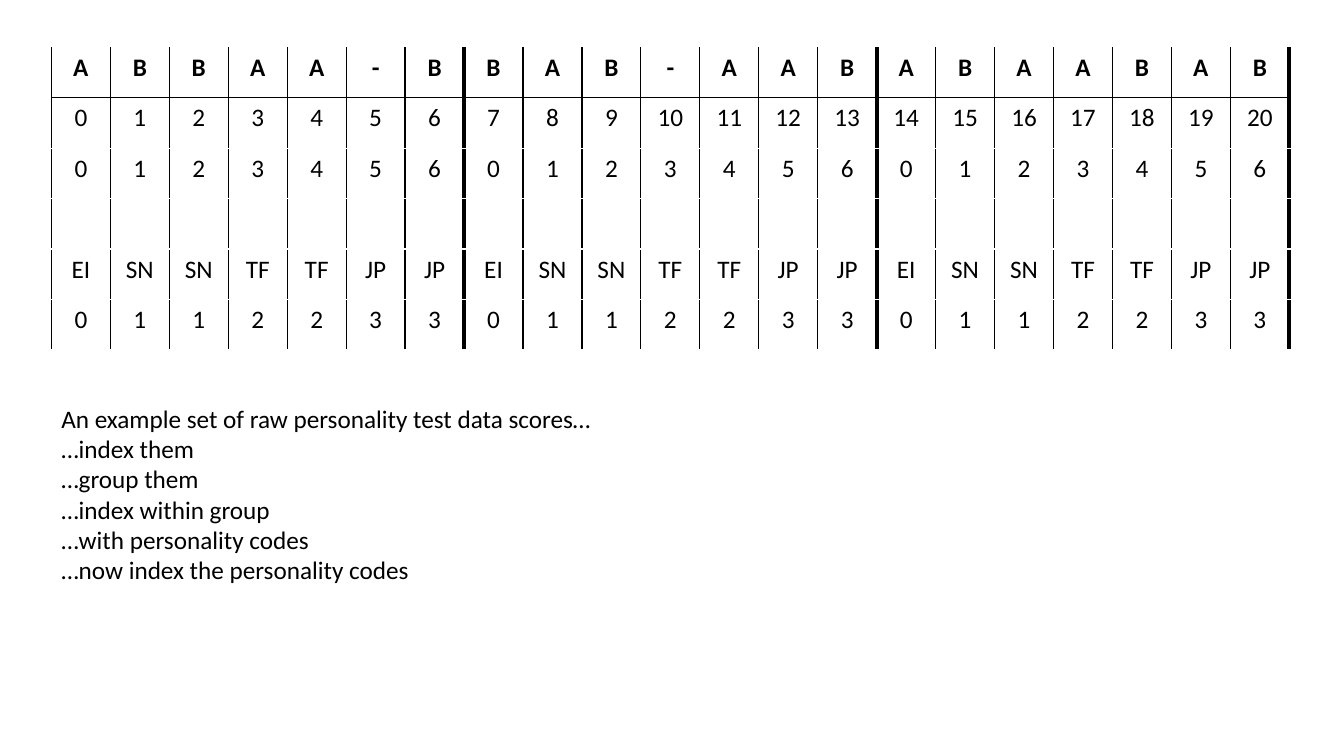
from dataclasses import dataclass

from lxml import etree
from pptx import Presentation
from pptx.dml.color import RGBColor
from pptx.enum.text import MSO_AUTO_SIZE, PP_ALIGN
from pptx.oxml.ns import qn
from pptx.util import Inches, Pt

BLACK = RGBColor(0x00, 0x00, 0x00)
WHITE = RGBColor(0xFF, 0xFF, 0xFF)
CENTER = PP_ALIGN.CENTER
FIT_SHAPE = MSO_AUTO_SIZE.SHAPE_TO_FIT_TEXT

LEFT = Inches(0.51)
GROUP_SIZE = 7
GROUP_COUNT = 3
THIN, THICK = 1, 3
TEXT_FORMAT = {"name": "Calibri", "size": Pt(18), "bold": False}
HEADER_FORMAT = TEXT_FORMAT | {"bold": True}

ANSWERS = "ABBAA-BBAB-AABABAABAB"
CODES = ["EI", "SN", "SN", "TF", "TF", "JP", "JP"]
CODE_ORDER = list(dict.fromkeys(CODES))
STEPS = [
    "An example set of raw personality test data scores…",
    "…index them",
    "…group them",
    "…index within group",
    "…with personality codes",
    "…now index the personality codes",
]


@dataclass
class Border:
    side: str
    color: RGBColor
    points: int


def add_span(para, text: str, text_format: dict) -> None:
    span = para.add_run()
    span.text = text
    for name, value in text_format.items():
        setattr(span.font, name, value)
    span.font.color.rgb = BLACK


def add_borders(cell, borders: list[Border]) -> None:
    """Place the border lines ahead of the cell's fill, as the schema requires."""
    properties = cell._tc.get_or_add_tcPr()
    for position, border in enumerate(borders):
        line = etree.Element(qn(f"a:ln{border.side}"), w=str(Pt(border.points)))
        fill = etree.SubElement(line, qn("a:solidFill"))
        etree.SubElement(fill, qn("a:srgbClr"), val=str(border.color))
        properties.insert(position, line)


def cell_borders(row: int, column: int) -> list[Border]:
    """Divide the groups with thick lines and rule off the header row."""
    starts_group = column > 0 and column % GROUP_SIZE == 0
    ends_group = column % GROUP_SIZE == GROUP_SIZE - 1
    return [
        Border("L", BLACK, THICK if starts_group else THIN),
        Border("R", BLACK, THICK if ends_group else THIN),
        Border("T", BLACK if row == 1 else WHITE, THIN),
        Border("B", BLACK if row == 0 else WHITE, THIN),
    ]


def score_rows() -> list[list[str]]:
    count = len(ANSWERS)
    return [
        list(ANSWERS),
        [str(index) for index in range(count)],
        [str(index % GROUP_SIZE) for index in range(count)],
        [""] * count,
        CODES * GROUP_COUNT,
        [str(CODE_ORDER.index(code)) for code in CODES] * GROUP_COUNT,
    ]


def add_score_table(page) -> None:
    rows = score_rows()
    table = page.shapes.add_table(
        len(rows), len(ANSWERS), LEFT, Inches(0.47), Inches(12.28), Inches(3)
    ).table
    table.first_row = False
    table.horz_banding = False
    for row, texts in enumerate(rows):
        for column, text in enumerate(texts):
            cell = table.cell(row, column)
            cell.fill.solid()
            cell.fill.fore_color.rgb = WHITE
            add_borders(cell, cell_borders(row, column))
            if text:
                para = cell.text_frame.paragraphs[0]
                para.alignment = CENTER
                add_span(para, text, HEADER_FORMAT if row == 0 else TEXT_FORMAT)


def add_steps(page) -> None:
    box = page.shapes.add_textbox(LEFT, Inches(3.95), Inches(7.07), Inches(2.52))
    frame = box.text_frame
    frame.word_wrap = True
    frame.auto_size = FIT_SHAPE
    for index, step in enumerate(STEPS):
        para = frame.add_paragraph() if index else frame.paragraphs[0]
        add_span(para, step, TEXT_FORMAT)


def main() -> None:
    deck = Presentation()
    deck.slide_width = Inches(13.33)
    deck.slide_height = Inches(7.5)
    page = deck.slides.add_slide(deck.slide_layouts[6])
    add_score_table(page)
    add_steps(page)
    deck.save("out.pptx")


if __name__ == "__main__":
    main()
